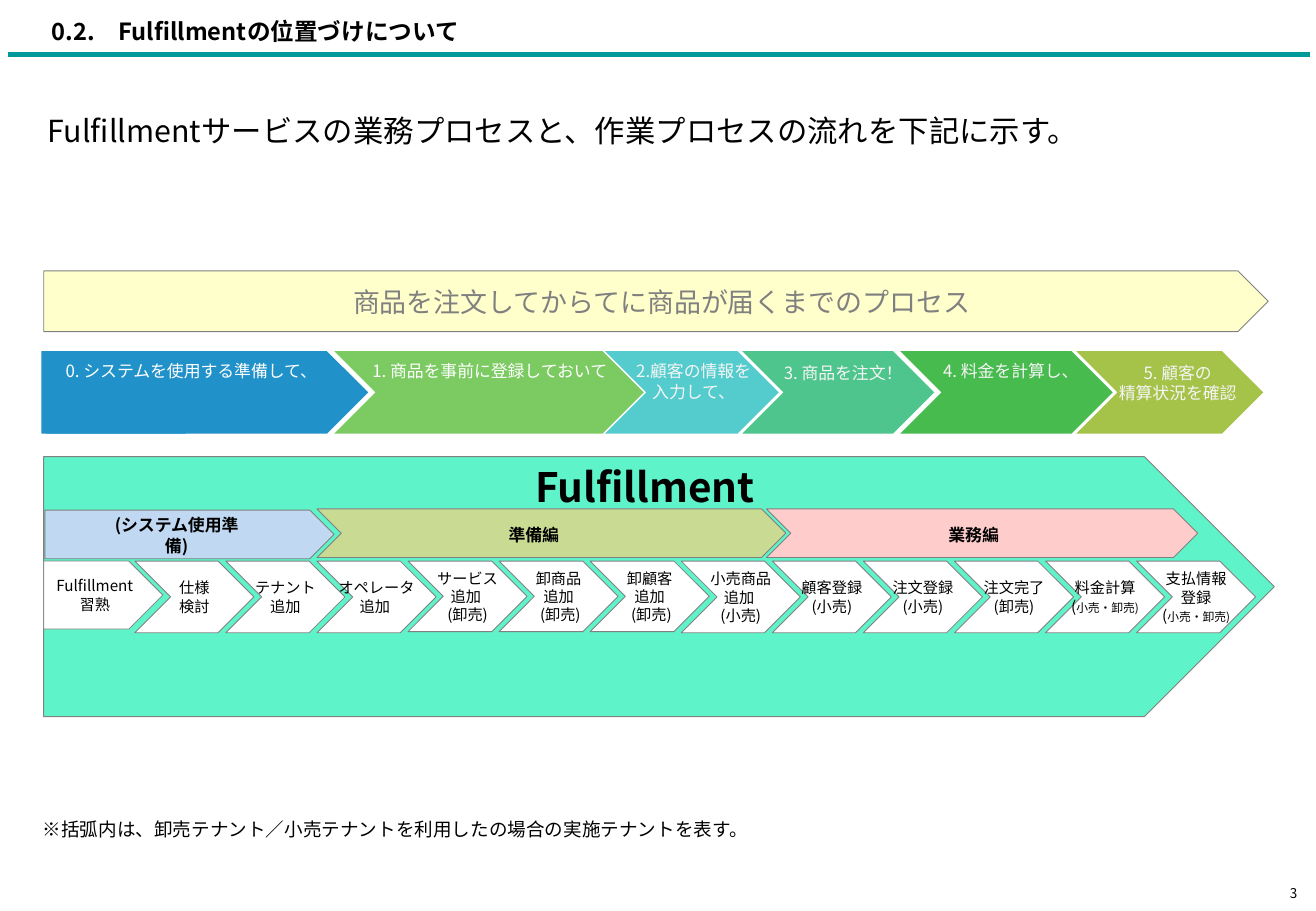
from lxml import etree
from pptx import Presentation
from pptx.dml.color import RGBColor
from pptx.enum.shapes import MSO_CONNECTOR, MSO_SHAPE
from pptx.enum.text import MSO_ANCHOR, MSO_AUTO_SIZE, PP_ALIGN
from pptx.oxml.ns import qn
from pptx.util import Pt

CHEVRON = MSO_SHAPE.CHEVRON
PENTAGON = MSO_SHAPE.PENTAGON
STRAIGHT = MSO_CONNECTOR.STRAIGHT
TOP, MIDDLE = MSO_ANCHOR.TOP, MSO_ANCHOR.MIDDLE
LEFT, CENTER, RIGHT = PP_ALIGN.LEFT, PP_ALIGN.CENTER, PP_ALIGN.RIGHT
NO_FIT, GROW = MSO_AUTO_SIZE.NONE, MSO_AUTO_SIZE.SHAPE_TO_FIT_TEXT

COLORS = {
    "black": "000000", "white": "FFFFFF", "soft_white": "F5F5F5", "gray": "808080",
    "teal": "009999", "mint": "5FF3CA", "cream": "FFFFCC", "blue": "2191C9",
    "green": "7CCA62", "aqua": "54CCCD", "sea": "4DC58D", "leaf": "48BB4F",
    "olive": "A5C249", "pale_blue": "C1D8F2", "pale_green": "C9DA92", "pink": "FFCCCC",
}
SMALL_TENANTS = [("(", 9), ("小売・卸売)", 7)]

PHASE_TOP, PHASE_HEIGHT = 208.1, 49
# left, width, fill, label lines, label box, label colour
PHASES = [
    (27.4, 190.8, "blue", ["0. システムを使用する準備して、"],
     (30.2, 210.2, 166.3, 19.4), "white"),
    (198, 183.6, "green", ["1. 商品を事前に登録しておいて"],
     (215.3, 210.2, 149.8, 19.4), "white"),
    (358.6, 103, "aqua", ["2.顧客の情報を", "入力して、"],
     (356.4, 210.2, 109.4, 31.7), "soft_white"),
    (439.9, 113.8, "sea", ["3. 商品を注文！"],
     (424.8, 215.3, 149.8, 10.8), "soft_white"),
    (533.5, 126, "leaf", ["4. 料金を計算し、"],
     (524.2, 214.6, 149.8, 10.8), "soft_white"),
    (637.9, 110.9, "olive", ["5. 顧客の", "精算状況を確認"],
     (653, 211, 90, 31.7), "soft_white"),
]

# kind, box, fill, label, label left
BANDS = [
    (CHEVRON, (187.9, 301.7, 277.9, 28.8), "pale_green", "準備編", 270.7),
    (CHEVRON, (454.3, 301.7, 255.6, 28.8), "pink", "業務編", 531.4),
    (PENTAGON, (26.6, 302.4, 171.4, 28.8), "pale_blue", "(システム使用準備)", 59),
]

STEP_LEFT, STEP_PITCH, STEP_TOP, STEP_WIDTH = 25.9, 53.98, 332.6, 70.6
# height, label lines
STEPS = [
    (40.3, ["Fulfillment", "習熟"]),
    (42.5, ["仕様", "検討"]),
    (42.5, ["テナント", "追加"]),
    (42.5, ["オペレータ", "追加 "]),
    (41.8, ["サービス", "追加 ", "(卸売)"]),
    (41.8, ["卸商品", "追加", " (卸売)"]),
    (41.8, ["卸顧客", "追加", " (卸売)"]),
    (42.5, ["小売商品", "追加 ", "(小売)"]),
    (42.5, ["顧客登録", "(小売)"]),
    (42.5, ["注文登録", "(小売)"]),
    (42.5, ["注文完了", "(卸売)"]),
    (42.5, ["料金計算", SMALL_TENANTS]),
    (42.5, ["支払情報", "登録", SMALL_TENANTS]),
]


def rgb(name):
    return RGBColor.from_string(COLORS[name])


class SlideBuilder:
    font = "Noto Sans CJK JP"
    outline = 0.5

    def __init__(self, slide):
        self.slide = slide

    def label(self, shape, lines, size, color="black", bold=False, align=CENTER,
              insets=(3, 3, 3, 3), **frame_format):
        """Fill a shape with paragraphs; a line is a string or a list of (text, size)."""
        frame = shape.text_frame
        left, top, right, bottom = insets
        settings = {
            "margin_left": Pt(left), "margin_top": Pt(top), "margin_right": Pt(right),
            "margin_bottom": Pt(bottom), "vertical_anchor": MIDDLE,
            "word_wrap": True, "auto_size": NO_FIT, **frame_format,
        }
        for name, value in settings.items():
            setattr(frame, name, value)
        for index, line in enumerate(lines):
            paragraph = frame.add_paragraph() if index else frame.paragraphs[0]
            paragraph.alignment = align
            runs = [(line, size)] if isinstance(line, str) else line
            for text, run_size in runs:
                run = paragraph.add_run()
                run.text = text
                font_format = {"name": self.font, "size": Pt(run_size), "bold": bold}
                for name, value in font_format.items():
                    setattr(run.font, name, value)
                run.font.color.rgb = rgb(color)
                east_asian = etree.SubElement(run.font._element, qn("a:ea"))
                east_asian.set("typeface", self.font)

    def title(self, box, text, size):
        shape = self.slide.shapes.title
        for name, value in zip(("left", "top", "width", "height"), box):
            setattr(shape, name, Pt(value))
        self.label(shape, [text], size, bold=True, align=LEFT, insets=(6, 3, 3, 3))

    def text(self, box, lines, size, **text_format):
        shape = self.slide.shapes.add_textbox(*map(Pt, box))
        self.label(shape, lines, size, **text_format)

    def arrow(self, kind, box, fill, outlined=True, point=0.5):
        """Add a block arrow; point is the depth of its tip relative to its height."""
        shape = self.slide.shapes.add_shape(kind, *map(Pt, box))
        shape.shadow.inherit = False
        shape.adjustments[0] = point
        shape.fill.solid()
        shape.fill.fore_color.rgb = rgb(fill)
        if outlined:
            shape.line.color.rgb = rgb("gray")
            shape.line.width = Pt(self.outline)
        else:
            shape.line.fill.background()
        return shape

    def rule(self, left, right, top, color, width):
        line = self.slide.shapes.add_connector(STRAIGHT, Pt(left), Pt(top), Pt(right), Pt(top))
        line.line.color.rgb = rgb(color)
        line.line.width = Pt(width)
        etree.SubElement(line._element.spPr, qn("a:effectLst"))


def main():
    presentation = Presentation()
    presentation.slide_width, presentation.slide_height = Pt(780), Pt(540)
    builder = SlideBuilder(presentation.slides.add_slide(presentation.slide_layouts[5]))

    builder.rule(5, 776.2, 32.4, "teal", 3)
    builder.title((24.5, 5, 730.8, 26.6), "0.2.　Fulfillmentの位置づけについて", 14)
    builder.text((22.3, 63.4, 730.8, 56.9),
                 ["Fulfillmentサービスの業務プロセスと、作業プロセスの流れを下記に示す。"], 18,
                 align=LEFT, insets=(6, 3, 3, 3), vertical_anchor=TOP)
    builder.text((749.5, 522, 26.6, 14.4), ["3"], 8, align=RIGHT,
                 insets=(7.2, 3.6, 7.2, 3.6), word_wrap=False)

    service = builder.arrow(PENTAGON, (25.9, 270.7, 729.4, 154.1), "mint")
    builder.label(service, ["Fulfillment"], 24, bold=True, insets=(25, 3, 3, 3),
                  vertical_anchor=TOP, word_wrap=False)
    process = builder.arrow(PENTAGON, (25.9, 160.6, 725.8, 36), "cream")
    builder.label(process, ["商品を注文してからてに商品が届くまでのプロセス"], 16,
                  color="gray", insets=(19, 3, 3, 3), word_wrap=False)

    builder.arrow(CHEVRON, (24.5, PHASE_TOP, 85.7, PHASE_HEIGHT), "blue",
                  outlined=False, point=0)
    for left, width, fill, *_ in PHASES:
        builder.arrow(CHEVRON, (left, PHASE_TOP, width, PHASE_HEIGHT), fill, outlined=False)
    for *_, lines, box, color in PHASES:
        builder.text(box, lines, 10, color=color, insets=(3.6,) * 4, auto_size=GROW)

    for kind, box, fill, label, label_left in BANDS:
        builder.arrow(kind, box, fill)
        builder.text((label_left, 308.2, 91.4, 18), [label], 10, bold=True, auto_size=GROW)

    for index, (height, lines) in enumerate(STEPS):
        box = (STEP_LEFT + index * STEP_PITCH, STEP_TOP, STEP_WIDTH, height)
        step = builder.arrow(CHEVRON if index else PENTAGON, box, "white")
        builder.label(step, lines, 9, word_wrap=False)

    builder.text((22.3, 482.4, 479.5, 18.7),
                 ["※括弧内は、卸売テナント／小売テナントを利用したの場合の実施テナントを表す。"], 11,
                 align=LEFT, auto_size=GROW)
    presentation.save("out.pptx")


if __name__ == "__main__":
    main()
